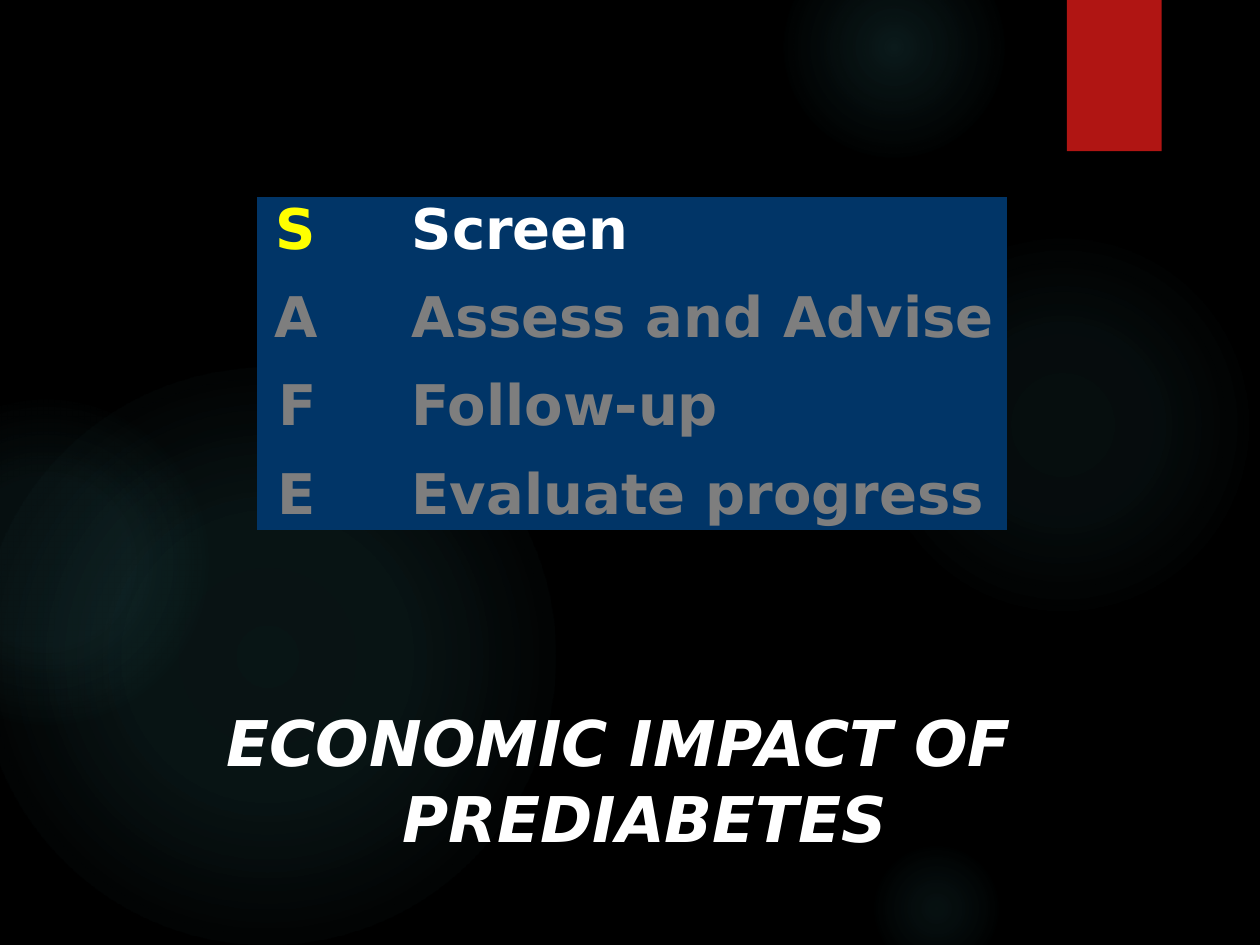
from dataclasses import dataclass

from lxml import etree
from pptx import Presentation
from pptx import util as u
from pptx.dml.color import RGBColor
from pptx.enum import shapes, text
from pptx.oxml import parse_xml
from pptx.oxml.ns import nsdecls, qn


@dataclass(frozen=True)
class Theme:
    background: str = "000000"
    glow: str = "50B9C1"
    ribbon: str = "B01513"
    panel: str = "013567"
    active_letter: str = "FFFF00"
    active: str = "FFFFFF"
    muted: str = "7E7E7E"
    font: str = "DejaVu Sans"
    title_size: int = 36
    table_size: int = 32


THEME = Theme()
NO_TABLE_STYLE = "{2D5ABB26-0587-4C30-8999-92F81FD0307C}"

# left, top, diameter in cm; gradient stops as (position %, opacity %)
GLOWS = [
    (17.5, 4.65, 7.82, [(0, 7), (36, 6), (69, 0)]),
    (15.8, -1.27, 4.45, [(0, 14), (36, 7), (73, 0)]),
    (17.5, 16.94, 2.74, [(0, 9), (36, 5), (66, 0)]),
    (-0.43, 7.42, 11.63, [(0, 11), (36, 10), (75, 0)]),
    (-2.34, 8.05, 6.55, [(0, 8), (36, 8), (72, 0)]),
]

# letter, its indent in cm, meaning
STEPS = [
    ("S", 0.38, "Screen"),
    ("A", 0.36, "Assess and Advise"),
    ("F", 0.43, "Follow-up"),
    ("E", 0.41, "Evaluate progress"),
]


def write_text(frame, content, *, size, color, italic=False, left=0, hanging=0,
               before=0, line=None):
    paragraph = frame.paragraphs[0]
    paragraph.alignment = text.PP_ALIGN.LEFT
    paragraph.space_before = u.Pt(before)
    if line:
        paragraph.line_spacing = u.Pt(line)
    indents = paragraph._p.get_or_add_pPr()
    indents.set("marL", str(u.Cm(left)))
    indents.set("indent", str(u.Cm(-hanging)))
    run = paragraph.add_run()
    run.text = content
    font = run.font
    font.name, font.size = THEME.font, u.Pt(size)
    font.bold, font.italic = True, italic
    font.color.rgb = RGBColor.from_string(color)


def set_margins(box, top):
    box.margin_left = box.margin_right = box.margin_bottom = 0
    box.margin_top = u.Cm(top)


def add_backdrop_shape(slide, kind, left, top, width, height):
    shape = slide.shapes.add_shape(
        kind, u.Cm(left), u.Cm(top), u.Cm(width), u.Cm(height))
    shape.line.fill.background()
    shape.shadow.inherit = False
    # Backdrop shapes sit behind the title
    slide.shapes.title.element.addprevious(shape.element)
    return shape


def add_glow(slide, left, top, diameter, stops):
    glow = add_backdrop_shape(
        slide, shapes.MSO_SHAPE.OVAL, left, top, diameter, diameter)
    glow.fill.background()
    stop_xml = "".join(
        f'<a:gs pos="{position * 1000}"><a:srgbClr val="{THEME.glow}">'
        f'<a:alpha val="{opacity * 1000}"/></a:srgbClr></a:gs>'
        for position, opacity in stops)
    gradient = parse_xml(
        f'<a:gradFill {nsdecls("a")} rotWithShape="1"><a:gsLst>{stop_xml}</a:gsLst>'
        '<a:path path="circle"><a:fillToRect l="50000" t="50000" r="50000" b="50000"/>'
        '</a:path></a:gradFill>')
    properties = glow.element.spPr
    properties.replace(properties.find(qn("a:noFill")), gradient)


def add_ribbon(slide):
    ribbon = add_backdrop_shape(
        slide, shapes.MSO_SHAPE.RECTANGLE, 21.51, 0, 1.91, 3.05)
    ribbon.fill.solid()
    ribbon.fill.fore_color.rgb = RGBColor.from_string(THEME.ribbon)
    effects = ribbon.element.spPr.find(qn("a:effectLst"))
    shadow = etree.SubElement(
        effects, qn("a:outerShdw"), blurRad=str(u.Pt(3)), dist=str(u.Pt(2)),
        dir="5400000", rotWithShape="0")
    shade = etree.SubElement(shadow, qn("a:srgbClr"), val="000000")
    etree.SubElement(shade, qn("a:alpha"), val="45000")


def format_title(slide):
    title = slide.shapes.title
    title.left, title.top = u.Cm(4.55), u.Cm(14.15)
    title.width, title.height = u.Cm(16.28), u.Cm(3.12)
    frame = title.text_frame
    frame.word_wrap = True
    frame.auto_size = text.MSO_AUTO_SIZE.SHAPE_TO_FIT_TEXT
    frame.vertical_anchor = text.MSO_ANCHOR.TOP
    set_margins(frame, 0.03)
    write_text(frame, "ECONOMIC IMPACT OF PREDIABETES", size=THEME.title_size,
               color=THEME.active, italic=True, left=3.57, hanging=3.55, before=1)


def add_steps_table(slide):
    holder = slide.shapes.add_table(
        len(STEPS), 2, u.Cm(5.18), u.Cm(3.98), u.Cm(15.11), u.Cm(6.7))
    next(holder.element.iter(qn("a:tableStyleId"))).text = NO_TABLE_STYLE
    steps = holder.table
    steps.first_row = steps.horz_banding = False
    for column, width in zip(steps.columns, (2.18, 12.93)):
        column.width = u.Cm(width)

    last = len(STEPS) - 1
    for index, (letter, indent, meaning) in enumerate(STEPS):
        first = index == 0
        steps.rows[index].height = u.Cm(1.57 if index in (0, last) else 1.78)
        colors = ((THEME.active_letter, THEME.active) if first
                  else (THEME.muted, THEME.muted))
        entries = zip((letter, meaning), (indent, 0.94), colors)
        for column, (content, left, color) in enumerate(entries):
            cell = steps.cell(index, column)
            cell.fill.solid()
            cell.fill.fore_color.rgb = RGBColor.from_string(THEME.panel)
            set_margins(cell, 0 if first else 0.2)
            write_text(cell.text_frame, content, size=THEME.table_size, color=color,
                       left=left, before=0.2 if first else 6,
                       line=37.8 if index == last else None)


def main():
    deck = Presentation()
    deck.slide_width, deck.slide_height = u.Cm(25.4), u.Cm(19.05)
    slide = deck.slides.add_slide(deck.slide_layouts.get_by_name("Title Only"))

    # Backdrop
    slide.background.fill.solid()
    slide.background.fill.fore_color.rgb = RGBColor.from_string(THEME.background)
    for glow in GLOWS:
        add_glow(slide, *glow)
    add_ribbon(slide)

    # Content
    format_title(slide)
    add_steps_table(slide)
    deck.save("out.pptx")


if __name__ == "__main__":
    main()
